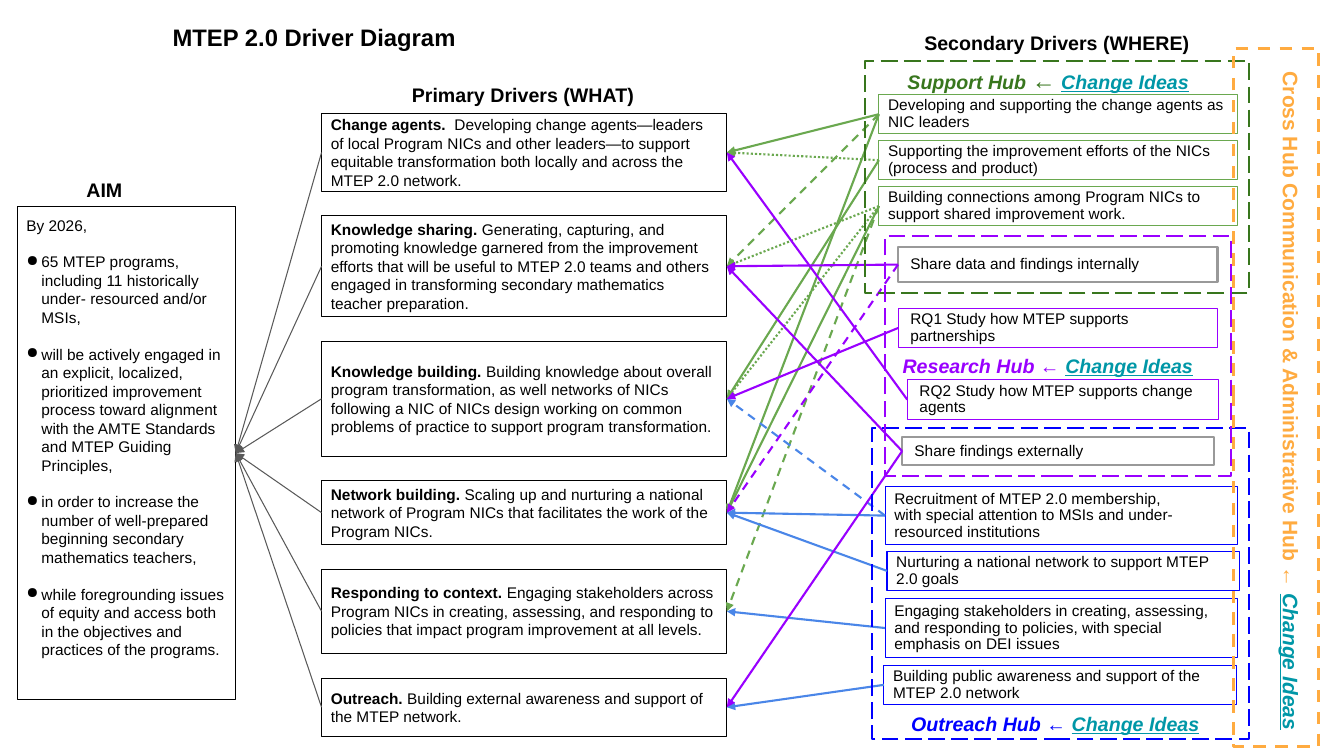
from dataclasses import dataclass
from typing import Any, Optional

import pptx
import pptx.dml.color
import pptx.enum.dml
import pptx.enum.shapes
import pptx.enum.text
import pptx.oxml
import pptx.oxml.ns
import pptx.util

Pt = pptx.util.Pt
ANCHOR = pptx.enum.text.MSO_ANCHOR
ALIGN = pptx.enum.text.PP_ALIGN
DASH = pptx.enum.dml.MSO_LINE
LEFT, RIGHT = 1, 3


@dataclass(frozen=True)
class Theme:
    font: str = "Arial"
    black: str = "000000"
    white: str = "FFFFFF"
    grey: str = "999999"
    aim_line: str = "595959"
    support: str = "38761D"
    support_line: str = "6AA84F"
    research: str = "9900FF"
    outreach: str = "0000FF"
    outreach_line: str = "4A86E8"
    cross: str = "FFAB40"
    ideas: str = "0097A7"
    title: float = 17
    heading: float = 14
    cross_size: float = 15
    body: float = 11
    thin: float = 0.75
    thick: float = 1.5
    cross_width: float = 2.25
    inset: float = 6.6
    wide_inset: float = 8.8


T = Theme()


@dataclass(frozen=True)
class Run:
    text: str
    size: float = T.body
    color: str = T.black
    bold: bool = False
    italic: bool = False
    underline: bool = False


@dataclass(frozen=True)
class Area:
    left: float
    top: float
    width: float
    height: float

    def points(self) -> tuple:
        return Pt(self.left), Pt(self.top), Pt(self.width), Pt(self.height)


@dataclass(frozen=True)
class Driver:
    key: str
    area: Area
    text: str
    color: str
    inset: float = T.inset
    weight: float = T.thin


@dataclass(frozen=True)
class Link:
    start: str
    end: str
    color: str
    dash: Optional[Any] = None
    weight: float = T.thick


def rgb(color: str) -> pptx.dml.color.RGBColor:
    return pptx.dml.color.RGBColor.from_string(color)


def add_runs(p: Any, runs: list[Run]) -> None:
    for run in runs:
        for i, part in enumerate(run.text.split("\n")):
            if i:
                p.add_line_break()
            r = p.add_run()
            r.text = part
            r.font.name, r.font.size = T.font, Pt(run.size)
            r.font.bold, r.font.italic = run.bold, run.italic
            r.font.underline = run.underline
            r.font.color.rgb = rgb(run.color)


def set_frame(tf: Any, inset: float, anchor: Any = ANCHOR.TOP) -> None:
    tf.word_wrap = True
    tf.auto_size = pptx.enum.text.MSO_AUTO_SIZE.NONE
    tf.vertical_anchor = anchor
    tf.margin_left = tf.margin_right = tf.margin_top = tf.margin_bottom = Pt(inset)


def add_label(s: Any, area: Area, runs: list[Run], inset: float, spacing: float = 1.0) -> None:
    tf = s.shapes.add_textbox(*area.points()).text_frame
    set_frame(tf, inset)
    p = tf.paragraphs[0]
    p.alignment, p.line_spacing = ALIGN.CENTER, spacing
    add_runs(p, runs)


def add_box(s: Any, area: Area, color: str, weight: float = T.thin, dash: Any = None) -> Any:
    sp = s.shapes.add_shape(pptx.enum.shapes.MSO_SHAPE.RECTANGLE, *area.points())
    sp.shadow.inherit = False
    sp.fill.background()
    sp.line.color.rgb, sp.line.width = rgb(color), Pt(weight)
    if dash is not None:
        sp.line.dash_style = dash
    return sp


def add_text_box(s: Any, area: Area, color: str, runs: list[Run], inset: float = T.inset,
                 weight: float = T.thin, spacing: float = 1.0) -> Any:
    sp = add_box(s, area, color, weight)
    set_frame(sp.text_frame, inset, ANCHOR.MIDDLE)
    p = sp.text_frame.paragraphs[0]
    p.alignment, p.line_spacing = ALIGN.LEFT, spacing
    add_runs(p, runs)
    return sp


def add_bullet(p: Any) -> None:
    pPr = p._p.get_or_add_pPr()
    pPr.set("marL", str(Pt(10.8)))
    pPr.set("indent", str(-Pt(10.8)))
    ns = pptx.oxml.ns.nsdecls("a")
    pPr.append(pptx.oxml.parse_xml(f'<a:buClr {ns}><a:srgbClr val="{T.black}"/></a:buClr>'))
    pPr.append(pptx.oxml.parse_xml(f'<a:buChar {ns} char="●"/>'))


def add_link(s: Any, link: Link, boxes: dict[str, Any]) -> None:
    c = s.shapes.add_connector(pptx.enum.shapes.MSO_CONNECTOR.STRAIGHT, 0, 0, 0, 0)
    c.begin_connect(boxes[link.start], LEFT)
    c.end_connect(boxes[link.end], RIGHT)
    c.line.color.rgb, c.line.width = rgb(link.color), Pt(link.weight)
    if link.dash is not None:
        c.line.dash_style = link.dash
    ns = pptx.oxml.ns.nsdecls("a")
    c.line._get_or_add_ln().append(pptx.oxml.parse_xml(f'<a:tailEnd {ns} type="triangle"/>'))
    c._element.spPr.append(pptx.oxml.parse_xml(f"<a:effectLst {ns}/>"))


AIMS = [
    "65 MTEP programs, including 11 historically under- resourced and/or MSIs,",
    "will be actively engaged in an explicit, localized, prioritized improvement process toward alignment with the AMTE Standards and MTEP Guiding Principles,",
    "in order to increase the number of well-prepared beginning secondary mathematics teachers,",
    "while foregrounding issues of equity and access both in the objectives and practices of the programs.",
]
# Primary drivers: key, height, name, description
PRIMARY = [
    ("agents", 55.4, "Change agents.  ", "Developing change agents—leaders of local Program NICs and other leaders—to support equitable transformation both locally and across the MTEP 2.0 network."),
    ("sharing", 72.2, "Knowledge sharing.", " Generating, capturing, and promoting knowledge garnered from the improvement efforts that will be useful to MTEP 2.0 teams and others engaged in transforming secondary mathematics teacher preparation."),
    ("building", 82.1, "Knowledge building.", " Building knowledge about overall program transformation, as well networks of NICs following a NIC of NICs design working on common problems of practice to support program transformation."),
    ("network", 45.6, "Network building.", " Scaling up and nurturing a national network of Program NICs that facilitates the work of the Program NICs."),
    ("context", 60.3, "Responding to context.", " Engaging stakeholders across Program NICs in creating, assessing, and responding to policies that impact program improvement at all levels."),
    ("outreach", 41.8, "Outreach.", " Building external awareness and support of the MTEP network."),
]
SUPPORT = [
    ("develop", "Developing and supporting the change agents as NIC leaders"),
    ("improve", "Supporting the improvement efforts of the NICs (process and product)"),
    ("connect", "Building connections among Program NICs to support shared improvement work."),
]
SECONDARY = [Driver(key, Area(627.8, 67.6 + 32.8 * i, 256.3, 28), text, T.support_line)
             for i, (key, text) in enumerate(SUPPORT)] + [
    Driver("internal", Area(641.5, 176.4, 228.2, 25.2), "Share data and findings internally", T.grey, T.wide_inset, T.thick),
    Driver("rq1", Area(641.5, 220.3, 228.2, 28), "RQ1 Study how MTEP supports partnerships", T.research, T.wide_inset),
    Driver("rq2", Area(648, 271.4, 222.5, 28), "RQ2 Study how MTEP supports change agents", T.research, T.wide_inset),
    Driver("external", Area(644.4, 312.5, 222.5, 19.4), "Share findings externally", T.grey, T.wide_inset, T.thick),
    Driver("recruit", Area(632.2, 347.8, 252, 41), "Recruitment of MTEP 2.0 membership, \nwith special attention to MSIs and under-resourced institutions", T.outreach),
    Driver("nurture", Area(633.6, 393.8, 252, 28), "Nurturing a national network to support MTEP 2.0 goals", T.outreach),
    Driver("engage", Area(632.2, 427.7, 252, 41.8), "Engaging stakeholders in creating, assessing, and responding to policies, with special emphasis on DEI issues", T.outreach),
    Driver("awareness", Area(631.4, 475.2, 252, 28), "Building public awareness and support of the MTEP 2.0 network", T.outreach),
]
# Links by colour: start, end, dash
LINKS = [Link(key, "aim", T.aim_line, weight=T.thin) for key, *_ in PRIMARY] + [
    Link(start, end, color, dash) for color, ends in {
        T.support_line: [("develop", "agents", None), ("improve", "building", None), ("connect", "network", None),
                         ("develop", "network", None), ("develop", "sharing", DASH.DASH), ("connect", "context", DASH.DASH),
                         ("connect", "building", DASH.ROUND_DOT), ("connect", "sharing", DASH.ROUND_DOT),
                         ("improve", "agents", DASH.ROUND_DOT)],
        T.outreach_line: [("nurture", "network", None), ("awareness", "outreach", None), ("engage", "context", None),
                          ("recruit", "network", None), ("recruit", "building", DASH.DASH)],
        T.research: [("rq1", "building", None), ("rq2", "agents", None), ("internal", "sharing", None),
                     ("external", "sharing", None), ("external", "outreach", None), ("internal", "network", DASH.DASH)],
    }.items() for start, end, dash in ends]
HEADINGS = [("Primary Drivers (WHAT)", Area(282.2, 52.6, 182.9, 29.5)),
            ("Secondary Drivers (WHERE)", Area(617.8, 15.8, 274.3, 29.5)),
            ("AIM", Area(41.8, 120.2, 65.5, 28.1))]
# Hubs: name, colour, frame, label area, arrow size, line spacing
HUBS = [
    ("Support Hub ", T.support, Area(617.8, 43.9, 274.3, 165.6), Area(627.8, 40.3, 241.9, 36.7), T.title, 0.9),
    ("Outreach Hub ", T.outreach, Area(622.8, 306, 269.3, 221.8), Area(632.9, 499.7, 241.9, 28.1), T.heading, 1.0),
    ("Research Hub ", T.research, Area(632.2, 168.5, 247, 171.4), Area(630, 244, 236.9, 35.3), T.heading, 1.0),
]


def main() -> None:
    prs = pptx.Presentation()
    prs.slide_width, prs.slide_height = Pt(960), Pt(540)
    s = prs.slides.add_slide(prs.slide_layouts[5])

    # Title and column headings
    title = s.shapes.title
    title.left, title.top, title.width, title.height = Area(114.5, 7.2, 282.2, 38.9).points()
    set_frame(title.text_frame, T.wide_inset)
    title.text_frame.paragraphs[0].alignment = ALIGN.LEFT
    add_runs(title.text_frame.paragraphs[0], [Run("MTEP 2.0 Driver Diagram", T.title, bold=True)])
    for text, area in HEADINGS:
        add_label(s, area, [Run(text, T.heading, bold=True)], T.inset)

    # Aim
    aim = add_box(s, Area(12.2, 147.6, 156.2, 352.1), T.black)
    boxes = {"aim": aim}
    tf = aim.text_frame
    set_frame(tf, T.inset)
    tf.paragraphs[0].alignment = ALIGN.LEFT
    add_runs(tf.paragraphs[0], [Run("By 2026,")])
    for text in AIMS:
        p = tf.add_paragraph()
        p.alignment, p.space_before = ALIGN.LEFT, Pt(13)
        add_bullet(p)
        add_runs(p, [Run(text)])

    # Primary drivers, stacked with equal gaps
    top = 81.2
    for key, height, name, text in PRIMARY:
        boxes[key] = add_text_box(s, Area(229.7, top, 289.5, height), T.black, [Run(name, bold=True), Run(text)])
        top += height + 17.5

    # Secondary drivers and links
    for d in SECONDARY:
        boxes[d.key] = add_text_box(s, d.area, d.color, [Run(d.text)], d.inset, d.weight, 0.9)
    for link in LINKS:
        add_link(s, link, boxes)

    # Hub frames and labels
    for name, color, frame, area, arrow, spacing in HUBS:
        add_box(s, frame, color, T.thick, DASH.LONG_DASH)
        add_label(s, area, [Run(name, T.heading, color, True, True), Run("←", arrow, color, True, True),
                            Run(" ", T.heading, color, True, True),
                            Run("Change Ideas", T.heading, T.ideas, True, True, True)], T.wide_inset, spacing)

    # Cross hub band
    band = add_box(s, Area(662.4, 253.4, 498.2, 61.2), T.cross, T.cross_width, DASH.DASH)
    band.rotation = 90
    set_frame(band.text_frame, T.wide_inset)
    p = band.text_frame.paragraphs[0]
    p.alignment = ALIGN.CENTER
    add_runs(p, [Run(" ", T.title), Run("Cross Hub Communication & Administrative Hub ", T.cross_size, T.cross, True),
                 Run("← ", T.cross_size, T.cross, True, True),
                 Run("Change Ideas", T.cross_size, T.ideas, True, True, True)])

    prs.save("out.pptx")


if __name__ == "__main__":
    main()
